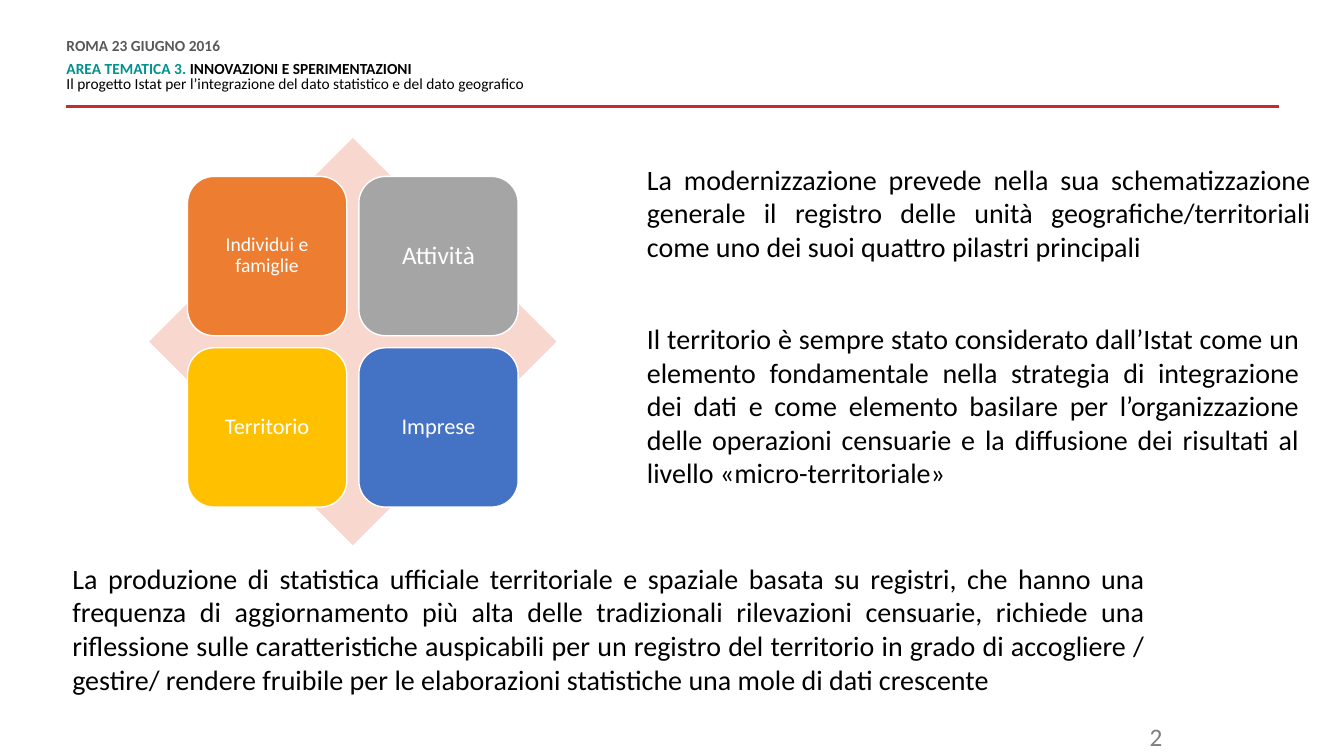
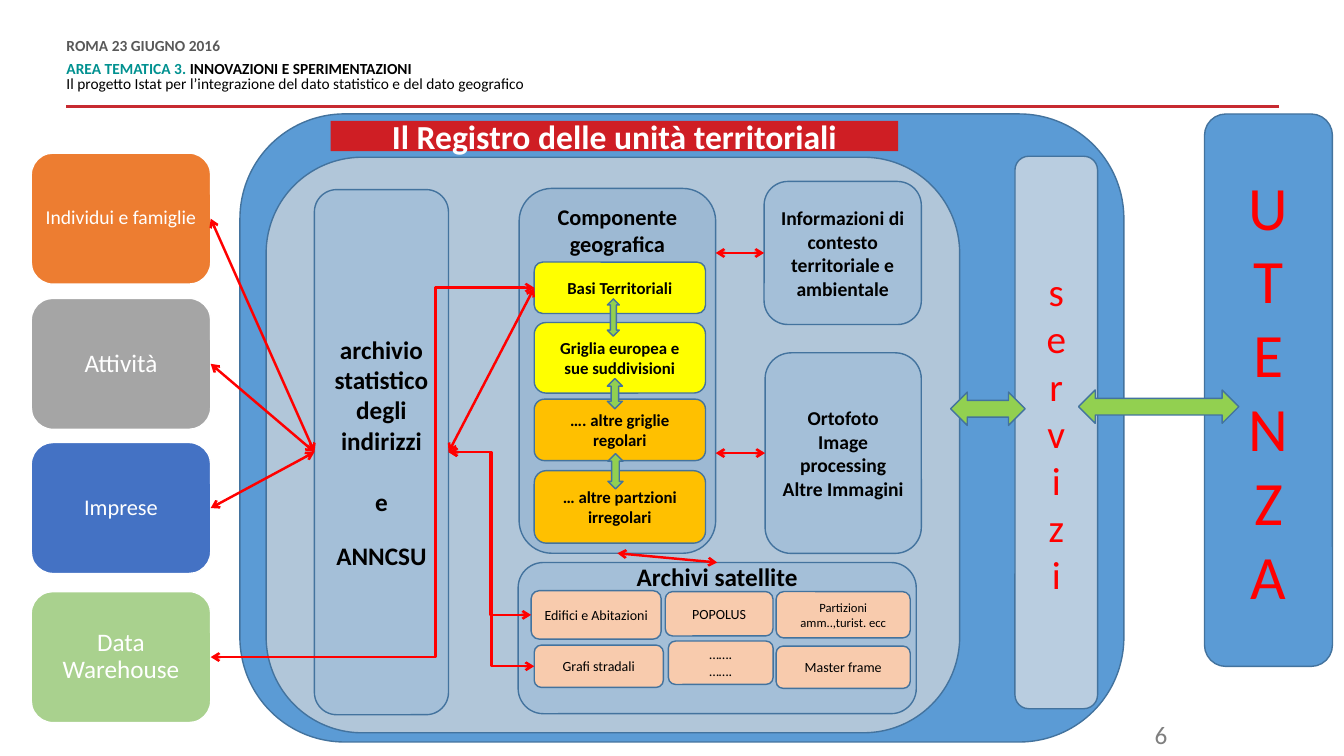
import pptx
import pptx.util
import pptx.dml.color
import pptx.enum.shapes
import pptx.enum.text
import pptx.oxml.ns
import lxml.etree

Pt = pptx.util.Pt
RGB = pptx.dml.color.RGBColor
SHAPE = pptx.enum.shapes.MSO_SHAPE
CONNECTOR = pptx.enum.shapes.MSO_CONNECTOR
ANCHOR = pptx.enum.text.MSO_ANCHOR
ALIGN = pptx.enum.text.PP_ALIGN
qn = pptx.oxml.ns.qn

FONT = "Calibri"
BLACK = RGB(0x00, 0x00, 0x00)
WHITE = RGB(0xFF, 0xFF, 0xFF)
DATE_GRAY = RGB(0x59, 0x59, 0x59)
NUMBER_GRAY = RGB(0x7F, 0x7F, 0x7F)
TEAL = RGB(0x00, 0x91, 0x90)
RULE_RED = RGB(0xC7, 0x2A, 0x31)
BANNER_RED = RGB(0xCF, 0x1E, 0x24)
RED = RGB(0xFF, 0x00, 0x00)
BLUE = RGB(0x5B, 0x9B, 0xD5)
DEEP_BLUE = RGB(0x2E, 0x75, 0xB6)
OUTLINE = RGB(0x43, 0x73, 0x9E)
SILVER = RGB(0xDB, 0xDB, 0xDB)
PALE_GRAY = RGB(0xE7, 0xE6, 0xE6)
YELLOW = RGB(0xFF, 0xFF, 0x00)
GOLD = RGB(0xFF, 0xC0, 0x00)
PEACH = RGB(0xF8, 0xCB, 0xAD)
PINK = RGB(0xF8, 0xD7, 0xCE)
ORANGE = RGB(0xED, 0x7D, 0x31)
GRAY = RGB(0xA5, 0xA5, 0xA5)
ROYAL = RGB(0x44, 0x72, 0xC4)
SAGE = RGB(0xA9, 0xD1, 0x8E)
GREEN = RGB(0x92, 0xD0, 0x50)

HEADER = [
    [("ROMA 23 GIUGNO 2016", DATE_GRAY, True)],
    [("AREA TEMATICA 3. ", TEAL, True), ("INNOVAZIONI E SPERIMENTAZIONI", BLACK, True)],
    [("Il progetto Istat per l’integrazione del dato statistico e del dato geografico", BLACK, False)],
]

BODY_TEXTS = [
    ((455, 112.3, 488.2, 98),
     "La modernizzazione prevede nella sua schematizzazione generale il registro delle unità "
     "geografiche/territoriali come uno dei suoi quattro pilastri principali"),
    ((455, 226.1, 480.2, 128.2),
     "Il territorio è sempre stato considerato dall’Istat come un elemento fondamentale nella "
     "strategia di integrazione dei dati e come elemento basilare per l’organizzazione delle "
     "operazioni censuarie e la diffusione dei risultati al livello «micro-territoriale»"),
    ((44.6, 397.4, 780.5, 104.4),
     "La produzione di statistica ufficiale territoriale e spaziale basata su registri, che hanno "
     "una frequenza di aggiornamento più alta delle tradizionali rilevazioni censuarie, richiede "
     "una riflessione sulle caratteristiche auspicabili per un registro del territorio in grado di "
     "accogliere / gestire/ rendere fruibile per le elaborazioni statistiche una mole di dati "
     "crescente"),
]

PILLARS = [
    ("Individui e famiglie", 14, ORANGE),
    ("Attività", 18, GRAY),
    ("Territorio", 16, GOLD),
    ("Imprese", 16, ROYAL),
]

SOURCES = [
    ("Individui e famiglie", 14, ORANGE, 109.4),
    ("Attività", 18, GRAY, 213.1),
    ("Imprese", 16, ROYAL, 316.1),
    ("Data Warehouse", 18, SAGE, 422.6),
]

GEO_LAYERS = [
    ("Basi Territoriali", YELLOW, 187.2, 36.7),
    ("Griglia europea e sue suddivisioni", YELLOW, 230.4, 50.4),
    ("…. altre griglie regolari", GOLD, 285.1, 43.9),
    ("… altre partzioni irregolari", GOLD, 336.2, 51.8),
]

SATELLITES = [
    (["Edifici e Abitazioni"], 10, (379.4, 421.9, 92.9, 34.6)),
    (["Grafi stradali"], 10, (381.6, 460.8, 92.2, 30.2)),
    (["POPOLUS"], 10, (475.2, 422.6, 77, 31.7)),
    (["…….", "……."], 10, (477.4, 457.9, 74.9, 31)),
    (["Partizioni amm..,turist. ecc"], 9, (554.4, 422.6, 95.8, 33.1)),
    (["Master frame"], 10, (554.4, 461.5, 95.8, 30.2)),
]

CONTEXT = [
    (["Informazioni di contesto territoriale e ambientale"], (545.8, 129.6, 112.3, 102.2)),
    (["Ortofoto", "Image processing", "Altre Immagini"], (546.5, 252, 111.6, 143.3)),
]

GREEN_ARROWS = [
    ((770.4, 278.6, 114.5, 23.8), 0),
    ((679, 280.1, 53.3, 23.8), 0),
    ((424.8, 222.5, 26.6, 8.6), 270),
    ((428.4, 275.8, 21.6, 10.8), 270),
    ((427, 331.2, 25.2, 10.8), 270),
]


def points(values):
    return [Pt(v) for v in values]


def write(s, paras, size, color=BLACK, bold=False, align=ALIGN.CENTER,
          anchor=ANCHOR.MIDDLE, inset=None, spacing=None):
    tf = s.text_frame
    tf.word_wrap = True
    tf.vertical_anchor = anchor
    if inset is not None:
        tf.margin_left = tf.margin_top = tf.margin_right = tf.margin_bottom = Pt(inset)
    for i, text in enumerate(paras):
        p = tf.paragraphs[0] if i == 0 else tf.add_paragraph()
        p.text = text
        p.alignment = align
        if spacing:
            p.line_spacing = spacing
        p.font.name = FONT
        p.font.size = Pt(size)
        p.font.bold = bold
        p.font.color.rgb = color
    return s


def add_text(sp, box, paras, size, **style):
    s = sp.add_textbox(*points(box))
    return write(s, paras, size, anchor=ANCHOR.TOP, **style)


def add_box(sp, box, fill, line=OUTLINE, kind=SHAPE.ROUNDED_RECTANGLE, alpha=None):
    s = sp.add_shape(kind, *points(box))
    s.shadow.inherit = False
    s.fill.solid()
    s.fill.fore_color.rgb = fill
    if alpha is not None:
        clr = s._element.spPr.find(qn("a:solidFill"))[0]
        lxml.etree.SubElement(clr, qn("a:alpha"), val=str(alpha * 1000))
    if line is None:
        s.line.fill.background()
    else:
        s.line.color.rgb = line
        s.line.width = Pt(1)
    return s


def add_card(sp, box, text, size, fill):
    return write(add_box(sp, box, fill, WHITE), [text], size, WHITE, inset=4.8, spacing=0.9)


def add_line(sp, ends, color, width, kind=CONNECTOR.STRAIGHT):
    c = sp.add_connector(kind, *points(ends))
    c.line.color.rgb = color
    c.line.width = Pt(width)
    lxml.etree.SubElement(c._element.spPr, qn("a:effectLst"))
    return c


def add_link(sp, start, end, kind=CONNECTOR.STRAIGHT, bend=None):
    ends = [0, 0, 0, 0]
    if isinstance(start[0], float):
        ends = [*start, *start]
    c = add_line(sp, ends, RED, 1.75, kind)
    if not isinstance(start[0], float):
        c.begin_connect(*start)
    c.end_connect(*end)
    ln = c.line._get_or_add_ln()
    for tag in ("a:headEnd", "a:tailEnd"):
        lxml.etree.SubElement(ln, qn(tag), type="arrow")
    if bend:
        geom = c._element.spPr.find(qn("a:prstGeom"))
        av = geom.find(qn("a:avLst"))
        if av is None:
            av = lxml.etree.SubElement(geom, qn("a:avLst"))
        lxml.etree.SubElement(av, qn("a:gd"), name="adj1", fmla=f"val {bend}")


def add_stacked(sp, box, text, size, fill, alpha=None):
    s = write(add_box(sp, box, fill, alpha=alpha), [text], size, RED)
    s.text_frame._txBody.bodyPr.set("vert", "wordArtVert")


def new_slide(prs, number, number_box):
    sp = prs.slides.add_slide(prs.slide_layouts[6]).shapes
    add_line(sp, (913.7, 76.3, 47.5, 76.3), RULE_RED, 2)
    tf = add_text(sp, (47.5, 28.1, 600.5, 50.4), [""] * len(HEADER), 11,
                  align=ALIGN.LEFT, inset=0).text_frame
    for p, runs in zip(tf.paragraphs, HEADER):
        p.line_spacing = Pt(10.8)
        for text, color, bold in runs:
            r = p.add_run()
            r.text = text
            r.font.color.rgb = color
            r.font.bold = bold
    tf.paragraphs[0].space_after = Pt(6)
    add_text(sp, number_box, [number], 18, color=NUMBER_GRAY, align=ALIGN.RIGHT)
    return sp


def build_pillars(prs):
    sp = new_slide(prs, "2", (621.4, 511.9, 216, 28.8))
    for box, text in BODY_TEXTS:
        add_text(sp, box, [text], 20, align=ALIGN.JUSTIFY)
    add_box(sp, (106.6, 98.6, 290.9, 290.9), PINK, None, SHAPE.DIAMOND)
    side, step = 113.8, 122.4
    for i, (text, size, fill) in enumerate(PILLARS):
        row, col = divmod(i, 2)
        add_card(sp, (133.9 + col * step, 126 + row * step, side, side), text, size, fill)


def build_register(prs):
    sp = new_slide(prs, "6", (756, 510.5, 85, 25.2))
    add_box(sp, (171.4, 81.4, 631.4, 448.6), BLUE)
    add_box(sp, (190.1, 112.3, 495.4, 411.1), SILVER, alpha=68)
    write(add_box(sp, (236.2, 86.4, 405.4, 21.6), BANNER_RED, None, SHAPE.RECTANGLE),
          ["Il Registro delle unità territoriali"], 24, WHITE, True, inset=0)

    geo = add_box(sp, (370.8, 134.6, 140.4, 260.6), DEEP_BLUE, alpha=15)
    write(geo, ["Componente geografica"], 16, bold=True, anchor=ANCHOR.TOP)
    layers = [write(add_box(sp, (381.6, y, 122.4, h), fill), [text], 12, bold=True)
              for text, fill, y, h in GEO_LAYERS]

    archive = add_box(sp, (370.1, 401.8, 284.4, 108), BLUE, alpha=15)
    add_text(sp, (370.1, 401, 284.4, 22), ["Archivi satellite"], 18, bold=True, inset=0)
    satellites = [write(add_box(sp, box, PEACH), paras, size)
                  for paras, size, box in SATELLITES]

    for paras, box in CONTEXT:
        s = write(add_box(sp, box, BLUE, alpha=15), paras, 14, bold=True)
        add_link(sp, (511.2, box[1] + box[3] / 2), (s, 1))

    addresses = add_box(sp, (224.6, 135.4, 95.8, 375.1), BLUE, alpha=15)
    write(addresses, ["archivio statistico degli indirizzi", "e", "ANNCSU"], 18, bold=True)
    for p, gap in zip(addresses.text_frame.paragraphs[1:], (22, 17)):
        p.space_before = Pt(gap)

    cards = [add_card(sp, (22.3, y, 128.2, 93.6), text, size, fill)
             for text, size, fill, y in SOURCES]
    for card in cards[:3]:
        add_link(sp, (card, 3), (addresses, 1))
    add_link(sp, (addresses, 3), (layers[0], 1))
    add_link(sp, (geo, 2), (archive, 0))
    for s in satellites[:2]:
        add_link(sp, (addresses, 3), (s, 1), CONNECTOR.ELBOW)
    add_link(sp, (cards[3], 3), (layers[0], 1), CONNECTOR.ELBOW, 69500)

    add_stacked(sp, (860.4, 81.4, 91.4, 394.6), "UTENZA", 44, BLUE)
    add_stacked(sp, (725, 111.6, 59, 394.6), "servizi", 28, PALE_GRAY, 68)
    for box, angle in GREEN_ARROWS:
        add_box(sp, box, GREEN, kind=SHAPE.LEFT_RIGHT_ARROW).rotation = angle


def main():
    prs = pptx.Presentation()
    prs.slide_width, prs.slide_height = Pt(960), Pt(540)
    build_pillars(prs)
    build_register(prs)
    prs.save("out.pptx")


if __name__ == "__main__":
    main()
